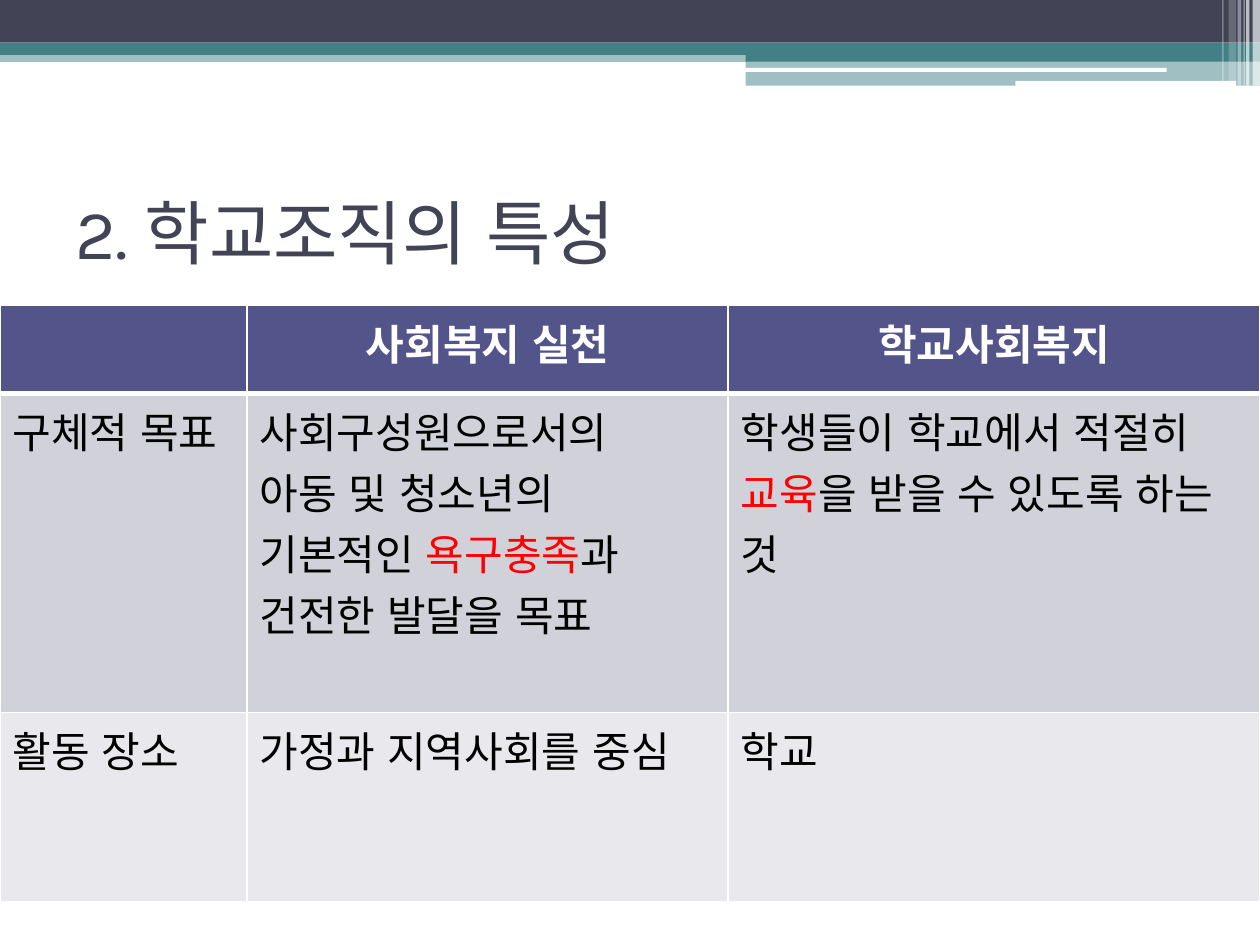
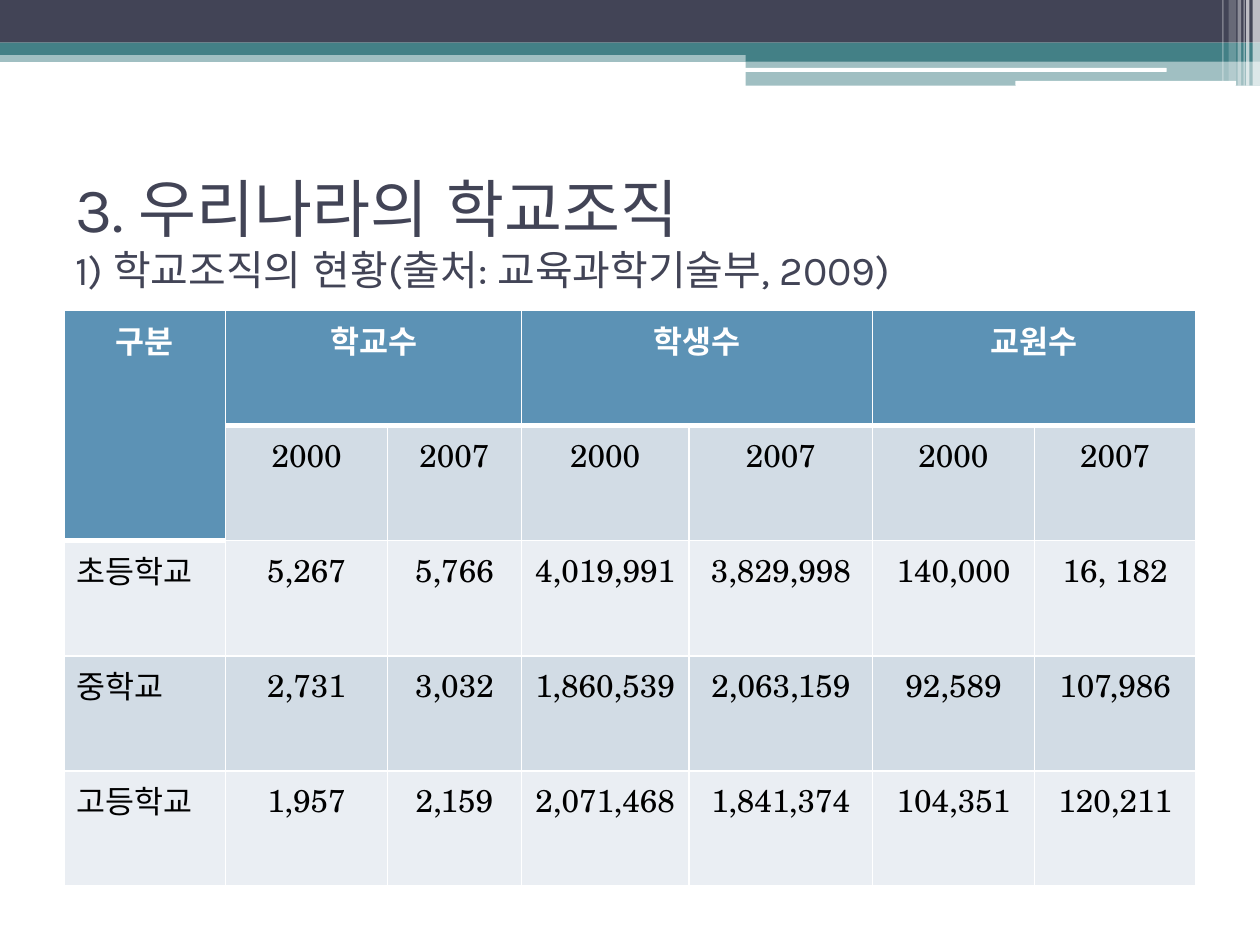
from lxml.etree import SubElement
from pptx import Presentation
from pptx.dml.color import RGBColor
from pptx.enum.lang import MSO_LANGUAGE_ID
from pptx.enum.shapes import MSO_SHAPE
from pptx.enum.text import MSO_ANCHOR, PP_ALIGN
from pptx.oxml.ns import qn
from pptx.util import Cm, Pt

# Shared look
NAVY, TEAL, WHITE, BLACK, RED = "424456", "438086", "FFFFFF", "000000", "FF0000"
SANS, SERIF = "Karla", "TeX Gyre Schola"
WIDE, HIGH = 25.4, 19.05
RECT, ROUND = MSO_SHAPE.RECTANGLE, MSO_SHAPE.ROUNDED_RECTANGLE

# Bands: left, top, width, height, preset, colour, opacity in percent
BANDS = [
    (0, 1.02, WIDE, 0.23, RECT, TEAL, 50),
    (0, 0, WIDE, 0.86, RECT, NAVY, 100),
    (0, 0.86, WIDE, 0.25, RECT, TEAL, 100),
    (15.03, 0.99, 10.37, 0.25, RECT, TEAL, 100),
    (15.03, 1.23, 10.37, 0.5, RECT, TEAL, 50),
    (15.01, 1.37, 8.51, 0.08, ROUND, WHITE, 100),
    (20.47, 1.63, 4.45, 0.1, ROUND, WHITE, 100),
]
# Light stripes at the right end: left, width, height, opacity
STRIPES = [
    (25.25, 0.15, 1.73, 65), (25.12, 0.07, 1.73, 65), (25.07, 0.02, 1.73, 60),
    (24.95, 0.07, 1.73, 40), (24.77, 0.15, 1.63, 20), (24.64, 0.03, 1.63, 30),
]

# Content: *stars* mark red words, None continues a merged cell
SLIDES = [
    {
        "title": [("2. 학교조직의 특성", 40)],
        "left": 0, "top": 6.15, "size": 24, "align": PP_ALIGN.LEFT,
        "head": "53548A", "tints": ("D1D1DA", "E9E9ED"),
        "cols": [4.98, 9.7, 10.72], "rows": [1.78, 6.43, 3.81],
        "merge": [],
        "cells": [
            ("", "사회복지 실천", "학교사회복지"),
            ("구체적 목표",
             "사회구성원으로서의\n아동 및 청소년의 기본적인 *욕구충족*과 건전한 발달을 목표",
             "학생들이 학교에서 적절히 *교육*을 받을 수 있도록 하는 것"),
            ("활동 장소", "가정과 지역사회를 중심", "학교"),
        ],
    },
    {
        "title": [("3. 우리나라의 학교조직", 36),
                  ("1) 학교조직의 현황(출처: 교육과학기술부, 2009)", 23.4)],
        "left": 1.29, "top": 6.26, "size": 18, "align": PP_ALIGN.CENTER,
        "head": "5C92B5", "tints": ("D2DCE5", "EAEEF3"),
        "cols": [3.26, 3.26, 2.7, 3.38, 3.7, 3.26, 3.26], "rows": [2.32] * 5,
        "merge": [((0, 0), (1, 0))] + [((0, c), (0, c + 1)) for c in (1, 3, 5)],
        "cells": [
            ("구분", "학교수", None, "학생수", None, "교원수", None),
            (None,) + ("2000", "2007") * 3,
            ("초등학교", "5,267", "5,766", "4,019,991", "3,829,998", "140,000", "16, 182"),
            ("중학교", "2,731", "3,032", "1,860,539", "2,063,159", "92,589", "107,986"),
            ("고등학교", "1,957", "2,159", "2,071,468", "1,841,374", "104,351", "120,211"),
        ],
    },
]


def paint(fill, hue):
    fill.solid()
    fill.fore_color.rgb = RGBColor.from_string(hue)


def style(run, hue, **form):
    form["language_id"] = MSO_LANGUAGE_ID.KOREAN
    for key, val in form.items():
        setattr(run.font, key, val)
    run.font.color.rgb = RGBColor.from_string(hue)


def add_band(slide, left, top, width, height, kind, hue, alpha):
    band = slide.shapes.add_shape(kind, Cm(left), Cm(top), Cm(width), Cm(height))
    band.shadow.inherit = False
    band.line.fill.background()
    paint(band.fill, hue)
    if alpha < 100:
        tone = band.fill._xPr.find(".//" + qn("a:srgbClr"))
        SubElement(tone, qn("a:alpha"), val=str(alpha * 1000))


def add_title(slide, lines):
    frame = slide.shapes.add_textbox(Cm(1.27), Cm(3.18), Cm(22.86), Cm(2.97)).text_frame
    frame.word_wrap = True
    frame.vertical_anchor = MSO_ANCHOR.MIDDLE
    para = frame.paragraphs[0]
    for i, (text, size) in enumerate(lines):
        if i:
            para.add_line_break()
        run = para.add_run()
        run.text = text
        style(run, NAVY, name=SANS, size=Pt(size))


def edge(cell, tops, ends):
    """White cell borders; tops and ends are the widths above and below."""
    prop = cell._tc.get_or_add_tcPr()
    for side, width in zip("LRTB", (1, 1, tops, ends)):
        line = SubElement(prop, qn("a:ln" + side), w=str(Pt(width)))
        SubElement(SubElement(line, qn("a:solidFill")), qn("a:srgbClr"), val=WHITE)


def write(cell, text, align, hue, **form):
    frame = cell.text_frame
    for i, row in enumerate(text.split("\n")):
        para = frame.add_paragraph() if i else frame.paragraphs[0]
        para.alignment = align
        for j, part in enumerate(row.split("*")):
            if part:
                run = para.add_run()
                run.text = part
                style(run, RED if j % 2 else hue, name=SERIF, **form)


def add_grid(slide, data):
    cols, rows, cells = data["cols"], data["rows"], data["cells"]
    grid = slide.shapes.add_table(len(rows), len(cols), Cm(data["left"]), Cm(data["top"]),
                                  Cm(sum(cols)), Cm(sum(rows))).table
    for col, width in zip(grid.columns, cols):
        col.width = Cm(width)
    for row, height in zip(grid.rows, rows):
        row.height = Cm(height)
    for first, last in data["merge"]:
        grid.cell(*first).merge(grid.cell(*last))

    def is_head(r, c):
        return r == 0 or cells[r][c] is None

    for r, row in enumerate(cells):
        for c, text in enumerate(row):
            cell, head = grid.cell(r, c), is_head(r, c)
            edge(cell, 3 if r and not head and is_head(r - 1, c) else 1, 3 if head else 1)
            paint(cell.fill, data["head"] if head else data["tints"][(r - 1) % 2])
            if text:
                align = PP_ALIGN.CENTER if head else data["align"] if c else PP_ALIGN.LEFT
                write(cell, text, align, WHITE if head else BLACK,
                      size=Pt(data["size"]), bold=head)


def main():
    deck = Presentation()
    deck.slide_width, deck.slide_height = Cm(WIDE), Cm(HIGH)
    for data in SLIDES:
        slide = deck.slides.add_slide(deck.slide_layouts[6])
        for band in BANDS:
            add_band(slide, *band)
        for left, width, height, alpha in STRIPES:
            add_band(slide, left, 0, width, height, RECT, WHITE, alpha)
        add_title(slide, data["title"])
        add_grid(slide, data)
    deck.save("out.pptx")


if __name__ == "__main__":
    main()
